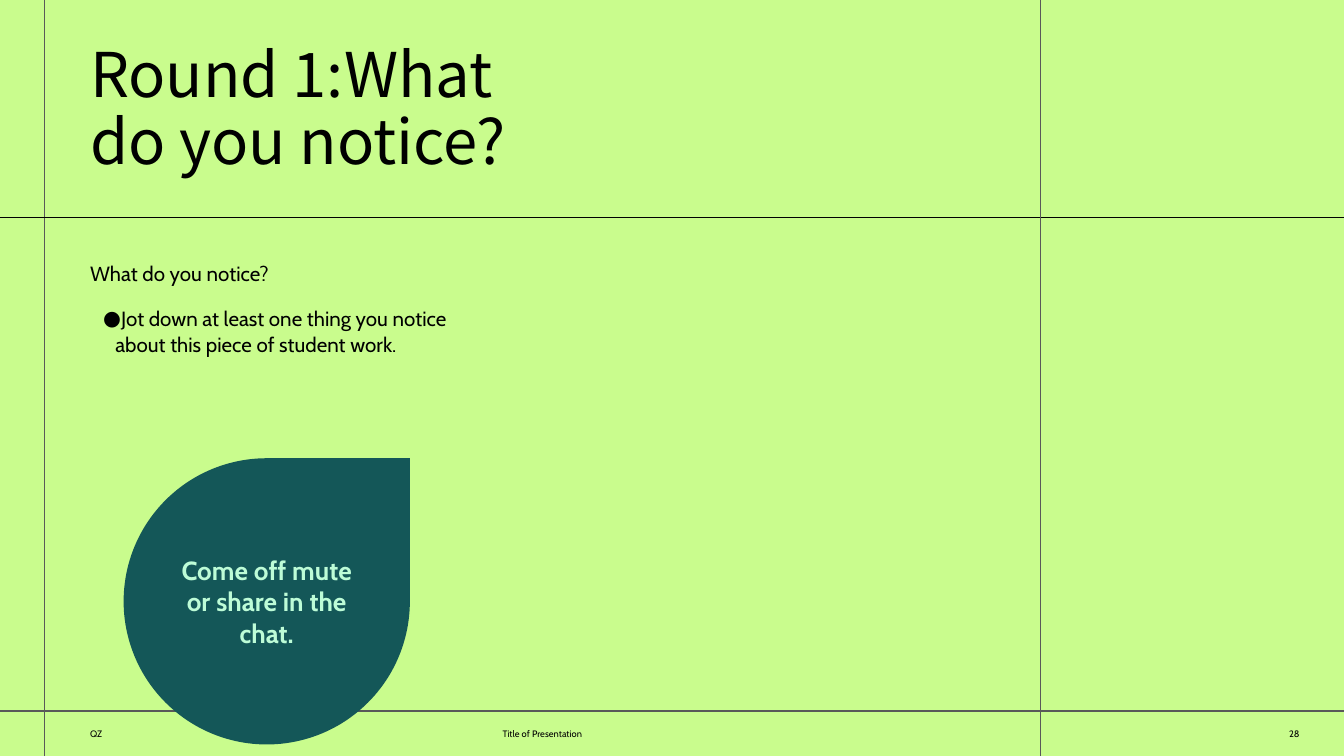
from lxml import etree
from pptx import Presentation
from pptx.dml.color import RGBColor
from pptx.enum.shapes import MSO_CONNECTOR as CONN, MSO_SHAPE as SHAPE
from pptx.enum.text import MSO_ANCHOR as ANCHOR, PP_ALIGN as ALIGN
from pptx.oxml.ns import qn
from pptx.util import Inches, Pt

BLACK, GREY = "000000", "595959"
W = 10
H = W * 9 / 16
LEFT = 0.67
FOOTER_TOP = 5.29


def color(value):
    return RGBColor.from_string(value)


def write(s, lines, size, font="Cabin", fill=BLACK, align=ALIGN.LEFT,
          anchor=ANCHOR.TOP, spacing=1.0, inset=0):
    """Fill a shape with one paragraph, breaking it between lines."""
    tf = s.text_frame
    tf.word_wrap = True
    tf.vertical_anchor = anchor
    tf.margin_left = tf.margin_right = Inches(inset)
    tf.margin_top = tf.margin_bottom = Inches(inset)
    p = tf.paragraphs[0]
    p.alignment = align
    p.line_spacing = spacing
    for i, line in enumerate(lines):
        if i:
            p.add_line_break()
        r = p.add_run()
        r.text = line
        r.font.size = Pt(size)
        r.font.name = font
        r.font.color.rgb = color(fill)
        for tag in ("a:ea", "a:cs"):
            etree.SubElement(r.font._element, qn(tag), typeface=font)
    return p


prs = Presentation()
prs.slide_width, prs.slide_height = Inches(W), Inches(H)
s = prs.slides.add_slide(prs.slide_layouts[6])
s.background.fill.solid()
s.background.fill.fore_color.rgb = color("C9FC8D")

# Grid lines
for x1, y1, x2, y2, line_color in [
    (0, FOOTER_TOP, W, FOOTER_TOP, GREY),
    (0.33, H, 0.33, 0, GREY),
    (0, 1.62, W, 1.62, BLACK),
    (7.74, 0, 7.74, H, GREY),
]:
    line = s.shapes.add_connector(
        CONN.STRAIGHT, Inches(x1), Inches(y1), Inches(x2), Inches(y2))
    line.line.color.rgb = color(line_color)
    line.line.width = Pt(0.75)
    etree.SubElement(line._element.spPr, qn("a:effectLst"))

# Footer
for x, width, text, align in [
    (6.74, 2.93, "28", ALIGN.RIGHT),
    (3.74, 2.9, "Title of Presentation", ALIGN.LEFT),
    (LEFT, 2.93, "QZ", ALIGN.LEFT),
]:
    footer = s.shapes.add_textbox(
        Inches(x), Inches(FOOTER_TOP), Inches(width), Inches(0.34))
    write(footer, [text], 5, align=align, anchor=ANCHOR.MIDDLE)

# Task and question
task = s.shapes.add_textbox(
    Inches(LEFT), Inches(2.27), Inches(2.86), Inches(0.57))
p = write(task, ["Jot down at least one thing you notice about this piece of student work."],
          11, spacing=1.05)
task.text_frame.margin_left = Inches(0.1)
p.space_before = Pt(12)
pPr = p._p.get_or_add_pPr()
pPr.set("marL", str(Inches(0.09)))
pPr.set("indent", str(-Inches(0.09)))
bullet_color = etree.SubElement(pPr, qn("a:buClr"))
etree.SubElement(bullet_color, qn("a:srgbClr"), val=BLACK)
etree.SubElement(pPr, qn("a:buFont"), typeface="Cabin")
etree.SubElement(pPr, qn("a:buChar"), char="●")

question = s.shapes.add_textbox(
    Inches(LEFT), Inches(1.93), Inches(2.86), Inches(0.19))
write(question, ["What do you notice?"], 11, spacing=1.05)

# Title
title = s.shapes.add_textbox(Inches(LEFT), Inches(0.33), Inches(5.96), Inches(1))
write(title, ["Round 1:What ", "do you notice?"], 33,
      font="Noto Sans CJK KR", spacing=0.9)

# Call to action
drop = s.shapes.add_shape(
    SHAPE.TEAR, Inches(0.92), Inches(3.41), Inches(2.13), Inches(2.13))
drop.shadow.inherit = False
drop.fill.solid()
drop.fill.fore_color.rgb = color("145758")
drop.line.fill.background()
p = write(drop, ["Come off mute or share in the chat."], 14, fill="BDFCD7",
          align=ALIGN.CENTER, anchor=ANCHOR.MIDDLE, inset=0.1)
p.runs[0].font.bold = True

prs.save("out.pptx")
